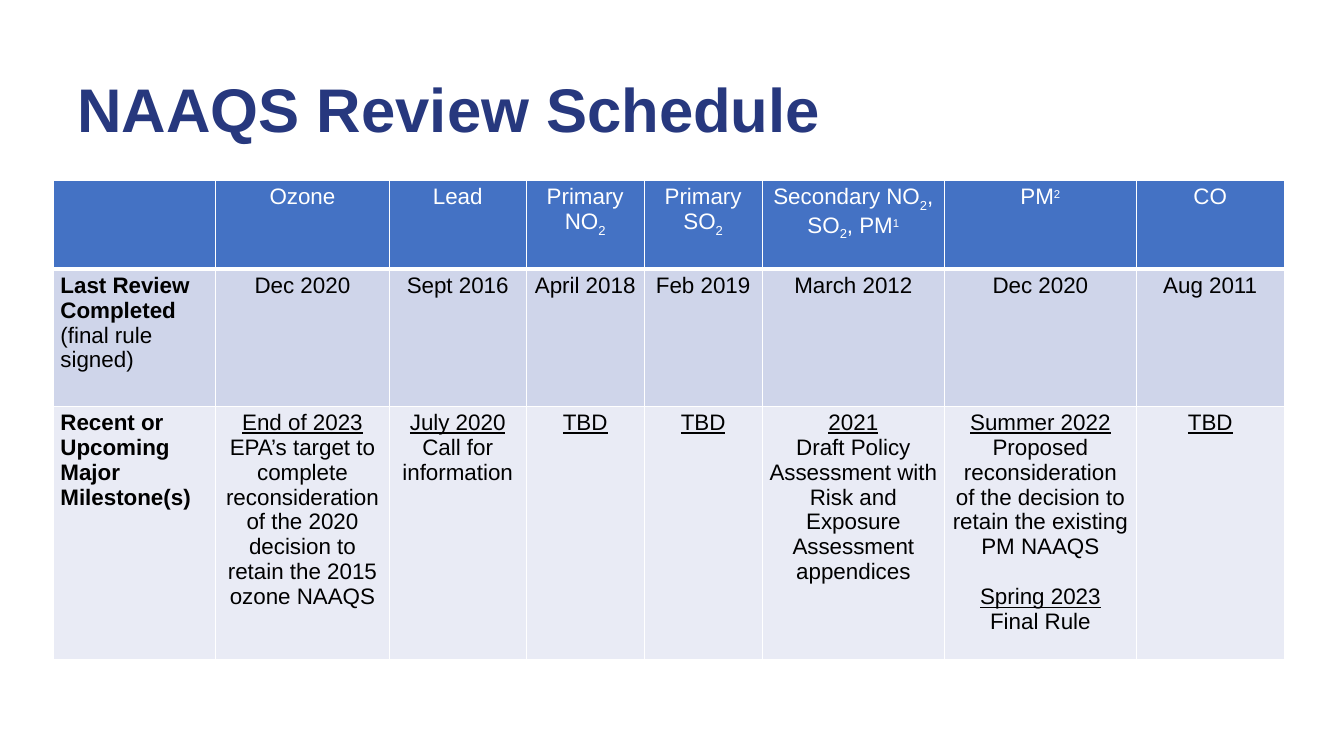
from pptx import Presentation
from pptx import util as u
from pptx.dml.color import RGBColor
from pptx.enum import text
from pptx.oxml import parse_xml
from pptx.oxml.ns import nsdecls

TITLE = "NAAQS Review Schedule"

HEADINGS = [
    [],
    [[("Ozone", "")]],
    [[("Lead", "")]],
    [[("Primary NO", ""), ("2", "sub")]],
    [[("Primary SO", ""), ("2", "sub")]],
    [[("Secondary NO", ""), ("2", "sub"), (", SO", ""), ("2", "sub"), (", PM", ""), ("1", "sup")]],
    [[("PM", ""), ("2", "sup")]],
    [[("CO", "")]],
]
LAST_REVIEW = [[[("Last Review Completed ", "bold"), ("(final rule signed)", "")]]] + [
    [[(date, "")]]
    for date in ("Dec 2020", "Sept 2016", "April 2018", "Feb 2019", "March 2012", "Dec 2020", "Aug 2011")
]
TBD = [[("TBD", "underline")]]
MILESTONES = [
    [[("Recent or Upcoming Major Milestone(s)", "bold")]],
    [[("End of 2023", "underline")],
     [("EPA’s target to complete reconsideration of the 2020 decision to retain the 2015 ozone NAAQS", "")]],
    [[("July 2020", "underline")], [("Call for information", "")]],
    TBD,
    TBD,
    [[("2021", "underline")],
     [("Draft Policy Assessment with Risk and Exposure Assessment appendices", "")]],
    [[("Summer 2022", "underline")],
     [("Proposed reconsideration of the decision to retain the existing PM NAAQS", "")],
     [("Spring 2023", "underline")],
     [("Final Rule", "")]],
    TBD,
]
SCHEDULE = [HEADINGS, LAST_REVIEW, MILESTONES]
COLUMN_WIDTHS = [1.61, 1.72, 1.36, 1.17, 1.17, 1.81, 1.9, 1.47]
ROW_HEIGHTS = [0.88, 1.36, 2.51]

THEME = {
    "font": "Arial",
    "title": "27387E",
    "title_size": 44,
    "body_size": 16,
    "sup_size": 14,
    "milestone_gap": 18,
    "row_fills": ["4472C4", "CFD5EA", "E9EBF5"],
    "row_text": ["FFFFFF", "000000", "000000"],
    "border": "FFFFFF",
}
BASELINES = {"sub": "-25000", "sup": "30000"}


def set_font(font, size, color, bold):
    font.name = THEME["font"]
    font.size = u.Pt(size)
    font.bold = bold
    font.color.rgb = RGBColor.from_string(color)


def add_border(cell, side, points):
    cell._tc.get_or_add_tcPr().append(parse_xml(
        f'<a:ln{side} {nsdecls("a")} w="{u.Pt(points)}"><a:solidFill>'
        f'<a:srgbClr val="{THEME["border"]}"/></a:solidFill></a:ln{side}>'))


def write_paragraph(paragraph, pieces, color):
    set_font(paragraph.font, THEME["body_size"], color, False)
    for words, style in pieces:
        run = paragraph.add_run()
        run.text = words
        if style == "bold":
            run.font.bold = True
        elif style == "underline":
            run.font.underline = True
        elif style in BASELINES:
            run._r.get_or_add_rPr().set("baseline", BASELINES[style])
            if style == "sup":
                run.font.size = u.Pt(THEME["sup_size"])


def fill_cell(cell, paragraphs, row, column):
    for side in "LRTB":
        add_border(cell, side, 3 if row == 0 and side == "B" else 1)
    cell.fill.solid()
    cell.fill.fore_color.rgb = RGBColor.from_string(THEME["row_fills"][row])
    cell.margin_left = cell.margin_right = u.Inches(0.07)
    cell.margin_top = cell.margin_bottom = u.Inches(0.04)
    for index, pieces in enumerate(paragraphs):
        paragraph = cell.text_frame.paragraphs[0] if index == 0 else cell.text_frame.add_paragraph()
        paragraph.alignment = text.PP_ALIGN.CENTER if column else text.PP_ALIGN.LEFT
        if index and pieces[0][1] == "underline":
            paragraph.space_before = u.Pt(THEME["milestone_gap"])
        write_paragraph(paragraph, pieces, THEME["row_text"][row])


def main():
    deck = Presentation()
    deck.slide_width, deck.slide_height = u.Inches(13.33), u.Inches(7.5)
    slide = deck.slides.add_slide(deck.slide_layouts[6])

    title = slide.shapes.add_textbox(u.Inches(0.67), u.Inches(0.74), u.Inches(11.99), u.Inches(1.45))
    title.text_frame.word_wrap = True
    heading = title.text_frame.paragraphs[0]
    heading.text = TITLE
    heading.line_spacing = 0.9
    set_font(heading.font, THEME["title_size"], THEME["title"], True)

    schedule = slide.shapes.add_table(
        len(ROW_HEIGHTS), len(COLUMN_WIDTHS), u.Inches(0.53), u.Inches(1.79),
        u.Inches(sum(COLUMN_WIDTHS)), u.Inches(sum(ROW_HEIGHTS))).table
    for column, width in zip(schedule.columns, COLUMN_WIDTHS):
        column.width = u.Inches(width)
    for row, height in zip(schedule.rows, ROW_HEIGHTS):
        row.height = u.Inches(height)
    for row, entries in enumerate(SCHEDULE):
        for column, paragraphs in enumerate(entries):
            fill_cell(schedule.cell(row, column), paragraphs, row, column)

    deck.save("out.pptx")


if __name__ == "__main__":
    main()
